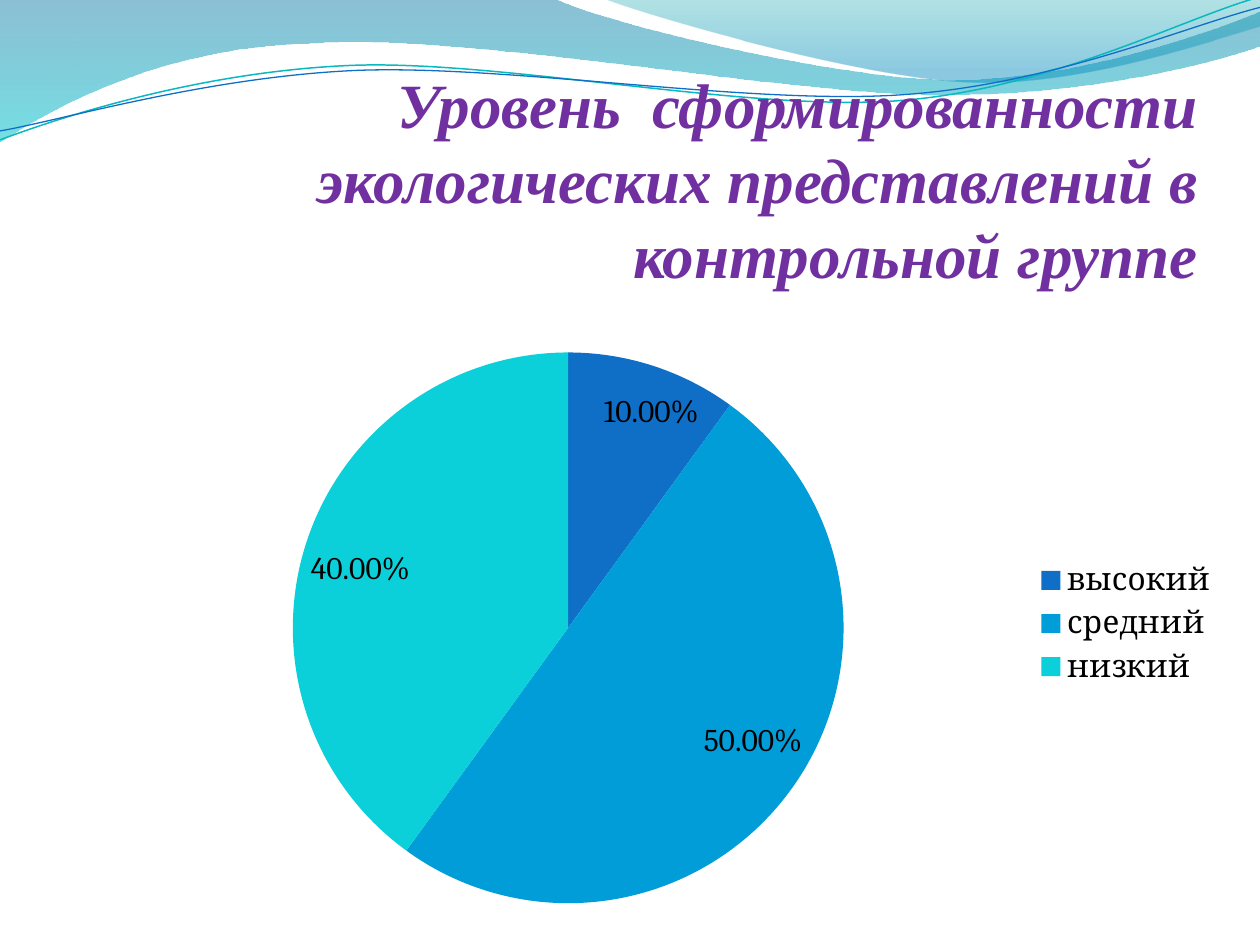
from dataclasses import dataclass
from math import cos, radians, sin
from typing import Optional

from lxml.etree import SubElement
from pptx import Presentation
from pptx.chart.data import CategoryChartData
from pptx.dml.color import RGBColor
from pptx.enum.chart import XL_CHART_TYPE as ChartType, XL_LEGEND_POSITION as LegendPosition
from pptx.enum.text import MSO_ANCHOR as Anchor, PP_ALIGN as Align
from pptx.oxml.ns import qn
from pptx.util import Cm, Pt


@dataclass(frozen=True)
class Theme:
    title_font: str = "Times New Roman"
    title_size: float = 36
    title_leading: float = 43.1
    title_color: str = "7030A0"
    chart_font: str = "Cambria"
    chart_size: float = 18
    chart_color: str = "000000"
    slices: tuple = ("0F6FC6", "009DD9", "0BD0D9")
    teal_line: str = "0AB8BF"
    blue_line: str = "0F6FC6"


@dataclass(frozen=True)
class Stop:
    position: float
    color: str
    opacity: int


@dataclass(frozen=True)
class Wave:
    start: tuple
    segments: tuple
    stops: tuple = ()
    line_color: Optional[str] = None
    line_width: float = 0
    rotation: float = 0
    pivot: tuple = (0, 0)


THEME = Theme()

WAVES = (
    Wave(
        (0, 0),
        (
            (11.18, -0.03), (12.09, 0.43, 16.87, 1.6, 19.25, 1.6),
            (21.67, 1.6, 24.33, 0.66, 25.4, 0.23), (25.43, 0.91),
            (24.97, 1.12, 22.1, 1.93, 18.95, 1.91),
            (15.8, 1.91, 9.7, 0.71, 6.53, 0.86),
            (3.28, 0.91, 1.17, 2.11, -0.03, 2.87), (0, 0),
        ),
        stops=(Stop(0, "0074A1", 45), Stop(1, "00C6CF", 55)),
    ),
    Wave(
        (12.17, -0.03),
        (
            (12.93, 0.28, 17.32, 1.57, 19.53, 1.65),
            (21.74, 1.75, 24.41, 0.81, 25.4, 0.53), (25.4, 0), (12.17, -0.03),
        ),
        stops=(Stop(0, "00A1A9", 30), Stop(0.8, "008BBF", 45)),
    ),
    Wave(
        (0, 2.82),
        (
            (1.22, 2.36, 4.01, 1.45, 7.04, 1.32),
            (10.03, 1.19, 15.06, 2.26, 18.11, 2.03),
            (21.16, 1.8, 23.83, 0.38, 25.35, -0.05),
        ),
        line_color=THEME.teal_line, line_width=0.85, rotation=357.3, pivot=(12.67, 1.46),
    ),
    Wave(
        (0, 2.64),
        (
            (1.19, 2.44, 4.17, 1.55, 7.19, 1.42),
            (10.24, 1.3, 15.16, 2.13, 18.21, 1.91),
            (21.23, 1.7, 23.9, 0.53, 25.4, 0.15),
        ),
        line_color=THEME.blue_line, line_width=0.75, rotation=357.3, pivot=(12.69, 1.5),
    ),
)


def unrotate(point: tuple, wave: Wave) -> tuple:
    """Turn a point back about the wave's pivot and return it as lengths."""
    angle = radians(-wave.rotation)
    x, y = point[0] - wave.pivot[0], point[1] - wave.pivot[1]
    return (Cm(wave.pivot[0] + x * cos(angle) - y * sin(angle)),
            Cm(wave.pivot[1] + x * sin(angle) + y * cos(angle)))


def bend(shape, segments: tuple) -> None:
    """Join each curve's three line steps into one cubic Bezier segment."""
    steps = iter(list(shape.element.iter(qn("a:lnTo"))))
    for segment in segments:
        first = next(steps)
        if len(segment) == 2:
            continue
        first.tag = qn("a:cubicBezTo")
        for step in (next(steps), next(steps)):
            first.append(step[0])
            step.getparent().remove(step)


def draw_wave(page, wave: Wave) -> None:
    """Draw one wave as a gradient band or as an open line."""
    points = [segment[i:i + 2] for segment in wave.segments
              for i in range(0, len(segment), 2)]
    builder = page.shapes.build_freeform(*unrotate(wave.start, wave))
    builder.add_line_segments([unrotate(point, wave) for point in points],
                              close=bool(wave.stops))
    shape = builder.convert_to_shape()
    bend(shape, wave.segments)
    shape.rotation = wave.rotation
    shape.shadow.inherit = False
    if not wave.stops:
        shape.fill.background()
        shape.line.color.rgb = RGBColor.from_string(wave.line_color)
        shape.line.width = Pt(wave.line_width)
        return
    shape.line.fill.background()
    shape.fill.gradient()
    shape.fill.gradient_angle = 270
    for target, stop in zip(shape.fill.gradient_stops, wave.stops):
        target.position = stop.position
        target.color.rgb = RGBColor.from_string(stop.color)
    for color, stop in zip(shape.element.spPr.iter(qn("a:srgbClr")), wave.stops):
        SubElement(color, qn("a:alpha")).set("val", str(stop.opacity * 1000))


def format_font(font, *, name: str, size: float, color: str,
                bold: bool = False, italic: bool = False) -> None:
    """Apply a typeface, size, colour and style to a font."""
    font.name, font.size = name, Pt(size)
    font.bold, font.italic = bold, italic
    font.color.rgb = RGBColor.from_string(color)


def write_title(page, text: str, *, align: Align, leading: float, **style) -> None:
    """Place the title placeholder in front of the waves and fill it."""
    box = page.shapes.title
    page.shapes.element.append(box.element)
    box.left, box.top, box.width, box.height = Cm(4.77), Cm(1.19), Cm(19.63), Cm(4.88)
    frame = box.text_frame
    frame.word_wrap = True
    frame.vertical_anchor = Anchor.TOP
    para = frame.paragraphs[0]
    para.alignment, para.line_spacing = align, Pt(leading)
    span = para.add_run()
    span.text = text
    format_font(span.font, **style)


def place_plot(chart, **layout: float) -> None:
    """Fix the inner plot area as fractions of the chart."""
    area = chart.element.find(".//" + qn("c:plotArea"))
    for old in area.findall(qn("c:layout")):
        area.remove(old)
    holder = SubElement(area, qn("c:layout"))
    area.insert(0, holder)
    manual = SubElement(holder, qn("c:manualLayout"))
    settings = {"layoutTarget": "inner", "xMode": "edge", "yMode": "edge", **layout}
    for tag, value in settings.items():
        SubElement(manual, qn(f"c:{tag}")).set("val", str(value))


def draw_pie(page, levels: dict) -> None:
    """Draw the pie chart of levels with percentage labels and a legend."""
    data = CategoryChartData(number_format="0.00%")
    data.categories = list(levels)
    data.add_series("Series 1", list(levels.values()))
    chart = page.shapes.add_chart(
        ChartType.PIE, Cm(0), Cm(6.93), Cm(24.82), Cm(11.28), data
    ).chart
    format_font(chart.font, name=THEME.chart_font, size=THEME.chart_size,
                color=THEME.chart_color)
    chart.has_title = False
    chart.has_legend = True
    chart.legend.position = LegendPosition.RIGHT
    chart.legend.include_in_layout = False
    plot = chart.plots[0]
    plot.vary_by_categories = True
    series = plot.series[0]
    for index, color in enumerate(THEME.slices):
        fill = series.points[index].format.fill
        fill.solid()
        fill.fore_color.rgb = RGBColor.from_string(color)
    labels = series.data_labels
    labels.show_value, labels.show_percentage = True, False
    labels.number_format, labels.number_format_is_linked = "0.00%", False
    place_plot(chart, x=0, y=1 / 64, w=12 / 13, h=63 / 64)


def main() -> None:
    """Build the slide and save the deck."""
    deck = Presentation()
    deck.slide_width, deck.slide_height = Cm(25.4), Cm(19.05)
    page = deck.slides.add_slide(deck.slide_layouts[5])
    for wave in WAVES:
        draw_wave(page, wave)
    write_title(
        page, "Уровень  сформированности экологических представлений в контрольной группе",
        align=Align.RIGHT, leading=THEME.title_leading, name=THEME.title_font,
        size=THEME.title_size, color=THEME.title_color, bold=True, italic=True,
    )
    draw_pie(page, {"высокий": 0.1, "средний": 0.5, "низкий": 0.4})
    deck.save("out.pptx")


if __name__ == "__main__":
    main()
